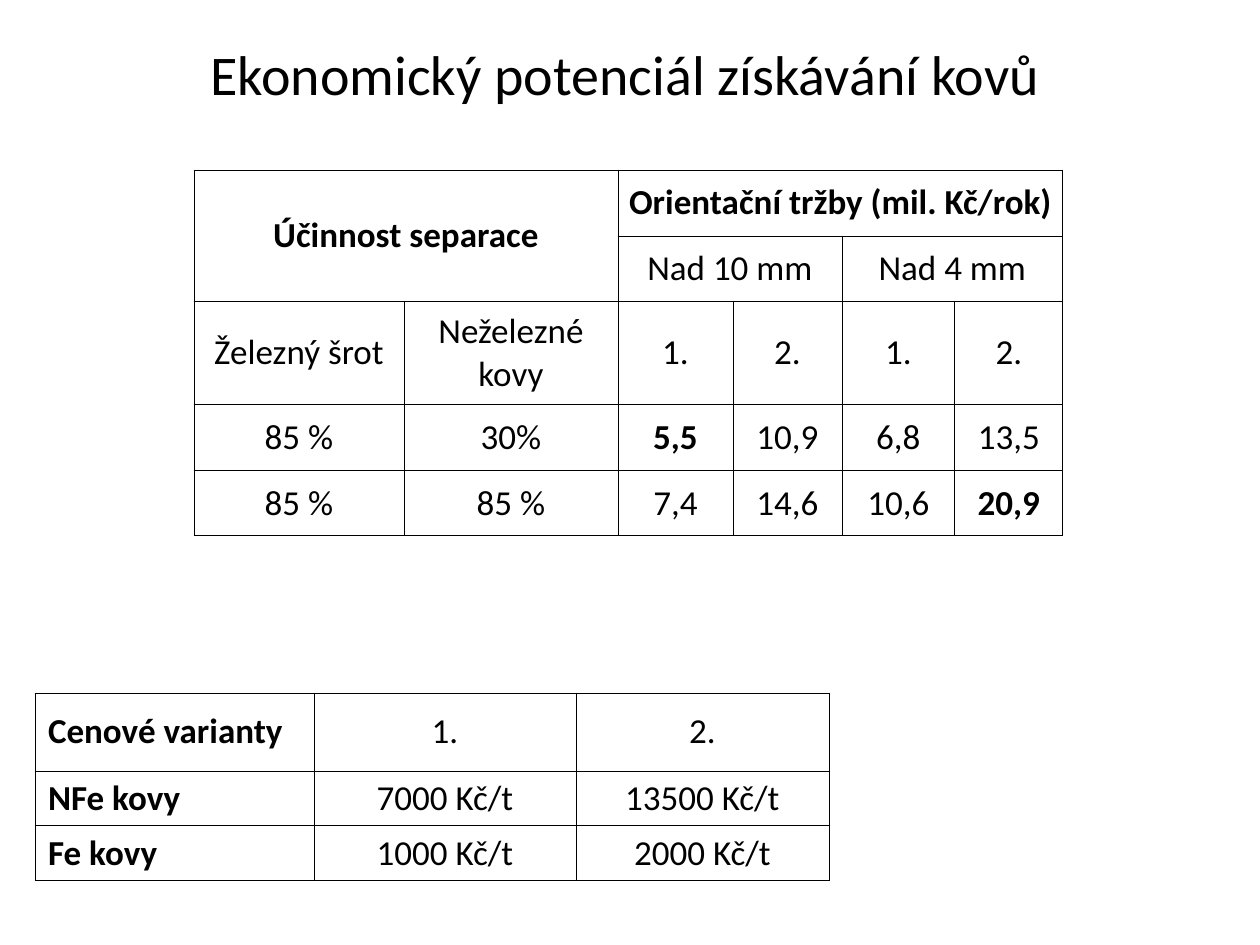
from lxml import etree
from pptx import Presentation
from pptx.dml.color import RGBColor
from pptx.enum.text import MSO_ANCHOR as Anchor, MSO_AUTO_SIZE as AutoSize, PP_ALIGN as Align
from pptx.oxml.ns import qn
from pptx.util import Emu, Pt

PX = 914400 / 126
BLACK, WHITE = "000000", "FFFFFF"


def px(*lengths):
    return [Emu(round(length * PX)) for length in lengths]


def write(frame, text, size=20, bold=False, color=BLACK, align=Align.LEFT):
    paragraph = frame.paragraphs[0]
    paragraph.alignment = align
    run = paragraph.add_run()
    run.text = text
    run.font.name = "Calibri"
    run.font.size = Pt(size)
    run.font.bold = bold
    run.font.color.rgb = RGBColor.from_string(color)


prs = Presentation()
prs.slide_width, prs.slide_height = px(1260, 945)
slide = prs.slides.add_slide(prs.slide_layouts[6])

# None marks a place covered by a merged cell
revenue = dict(
    at=(194, 170), columns=(210, 214, 115, 109, 113, 108), rows=(66, 65, 103, 66, 65),
    insets=(6, 9), merges=[(0, 0, 1, 1), (0, 2, 0, 5), (1, 2, 1, 3), (1, 4, 1, 5)],
    bold={"Účinnost separace", "Orientační tržby (mil. Kč/rok)", "5,5", "20,9"},
    first_align=Align.CENTER,
    content=[
        ["Účinnost separace", None, "Orientační tržby (mil. Kč/rok)", None, None, None],
        [None, None, "Nad 10 mm", None, "Nad 4 mm", None],
        ["Železný šrot", "Neželezné kovy", "1.", "2.", "1.", "2."],
        ["85 %", "30%", "5,5", "10,9", "6,8", "13,5"],
        ["85 %", "85 %", "7,4", "14,6", "10,6", "20,9"],
    ],
)
prices = dict(
    at=(35, 693), columns=(279, 262, 253), rows=(78, 54, 55),
    insets=(13, 6), merges=[],
    bold={"Cenové varianty", "NFe kovy", "Fe kovy"},
    first_align=Align.LEFT,
    content=[
        ["Cenové varianty", "1.", "2."],
        ["NFe kovy", "7000 Kč/t", "13500 Kč/t"],
        ["Fe kovy", "1000 Kč/t", "2000 Kč/t"],
    ],
)

for plan in (revenue, prices):
    columns, rows = plan["columns"], plan["rows"]
    table = slide.shapes.add_table(
        len(rows), len(columns), *px(*plan["at"], sum(columns), sum(rows))).table
    table.first_row = table.horz_banding = False
    for column, width in zip(table.columns, px(*columns)):
        column.width = width
    for row, height in zip(table.rows, px(*rows)):
        row.height = height
    for top, left, bottom, right in plan["merges"]:
        table.cell(top, left).merge(table.cell(bottom, right))

    side, edge = px(*plan["insets"])
    for r, values in enumerate(plan["content"]):
        for c, value in enumerate(values):
            cell = table.cell(r, c)
            cell.fill.solid()
            cell.fill.fore_color.rgb = RGBColor.from_string(WHITE)
            cell.vertical_anchor = Anchor.MIDDLE
            cell.margin_left = cell.margin_right = side
            cell.margin_top = cell.margin_bottom = edge
            properties = cell._tc.get_or_add_tcPr()
            for position, border in enumerate(("a:lnL", "a:lnR", "a:lnT", "a:lnB")):
                line = etree.Element(qn(border), w=str(Pt(0.5)))
                stroke = etree.SubElement(line, qn("a:solidFill"))
                etree.SubElement(stroke, qn("a:srgbClr"), val=BLACK)
                properties.insert(position, line)
            if value is not None:
                write(cell.text_frame, value, bold=value in plan["bold"],
                      align=Align.CENTER if c else plan["first_align"])

title = slide.shapes.add_textbox(*px(198, 33, 863, 81)).text_frame
title.word_wrap = False
title.auto_size = AutoSize.SHAPE_TO_FIT_TEXT
write(title, "Ekonomický potenciál získávání kovů", size=32)

prs.save("out.pptx")
